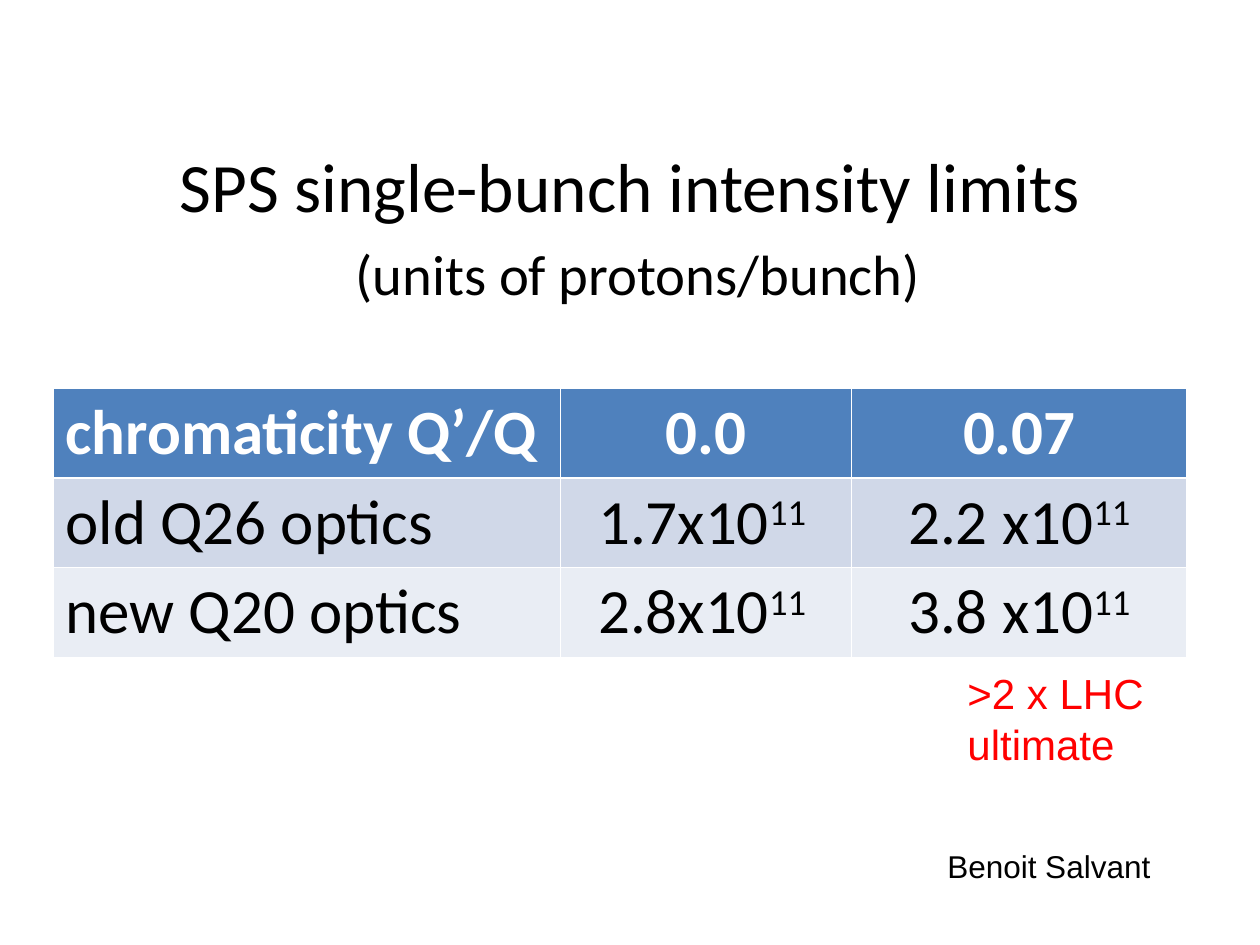
from copy import deepcopy

from pptx import Presentation
from pptx.dml.color import RGBColor
from pptx.enum.text import MSO_ANCHOR, MSO_AUTO_SIZE, PP_ALIGN
from pptx.util import Inches, Pt

BLACK = RGBColor(0x00, 0x00, 0x00)
WHITE = RGBColor(0xFF, 0xFF, 0xFF)
RED = RGBColor(0xFF, 0x00, 0x00)
HEADER_BLUE = RGBColor(0x4F, 0x81, 0xBD)
BAND_DARK = RGBColor(0xD0, 0xD8, 0xE8)
BAND_LIGHT = RGBColor(0xE9, 0xED, 0xF4)


def add_run(paragraph, text, size, color, font="Calibri", bold=False):
    run = paragraph.add_run()
    run.text = text
    run.font.name = font
    run.font.size = Pt(size)
    run.font.bold = bold
    run.font.color.rgb = color
    return run


def add_label(left, top, width, height, lines, size, color):
    """Add an unwrapped Arial text box with one paragraph per line."""
    box = slide.shapes.add_textbox(Inches(left), Inches(top), Inches(width), Inches(height))
    text_frame = box.text_frame
    text_frame.word_wrap = False
    text_frame.auto_size = MSO_AUTO_SIZE.SHAPE_TO_FIT_TEXT
    text_frame.text = "\n".join(lines)
    for paragraph in text_frame.paragraphs:
        font = paragraph.runs[0].font
        font.name = "Arial"
        font.size = Pt(size)
        font.color.rgb = color


presentation = Presentation()
presentation.slide_width = Inches(10)
presentation.slide_height = Inches(7.5)
slide = presentation.slides.add_slide(presentation.slide_layouts[5])

# Title
title = slide.shapes.title
title.left, title.top = Inches(0), Inches(1.17)
title.width, title.height = Inches(10), Inches(1.25)
title.text_frame.auto_size = MSO_AUTO_SIZE.NONE
title.text_frame.vertical_anchor = MSO_ANCHOR.MIDDLE
heading = title.text_frame.paragraphs[0]
heading.alignment = PP_ALIGN.CENTER
first_line = add_run(heading, "SPS single-bunch intensity limits", 39.6, BLACK)
heading.add_line_break()
# The break takes the size of the line it ends
heading._p[-1].append(deepcopy(first_line._r.rPr))
add_run(heading, " ", 39.6, BLACK)
add_run(heading, "(units of protons/bunch)", 32.4, BLACK)

# Intensity table: each cell is (text, superscript)
rows = [
    [("chromaticity Q’/Q", ""), ("0.0", ""), ("0.07", "")],
    [("old Q26 optics", ""), ("1.7x10", "11 "), ("2.2 x10", "11")],
    [("new Q20 optics", ""), ("2.8x10", "11 "), ("3.8 x10", "11")],
]
row_fills = [HEADER_BLUE, BAND_DARK, BAND_LIGHT]
column_widths = [4.03, 2.31, 2.66]

table = slide.shapes.add_table(
    len(rows), len(column_widths), Inches(0.42), Inches(3.08), Inches(9), Inches(2.1)
).table
for column, width in zip(table.columns, column_widths):
    column.width = Inches(width)

for row_index, (row, fill) in enumerate(zip(rows, row_fills)):
    is_header = row_index == 0
    color = WHITE if is_header else BLACK
    for column_index, (text, superscript) in enumerate(row):
        cell = table.cell(row_index, column_index)
        cell.fill.solid()
        cell.fill.fore_color.rgb = fill
        paragraph = cell.text_frame.paragraphs[0]
        paragraph.alignment = PP_ALIGN.CENTER if column_index else PP_ALIGN.LEFT
        add_run(paragraph, text, 36, color, bold=is_header)
        if superscript:
            exponent = add_run(paragraph, superscript, 36, color)
            exponent._r.rPr.set("baseline", "30000")

# Remark and credit
add_label(7.58, 5.25, 1.61, 0.91, [">2 x LHC", "ultimate"], 24, RED)
add_label(7.42, 6.67, 1.83, 0.4, ["Benoit Salvant"], 18, BLACK)

presentation.save("out.pptx")
